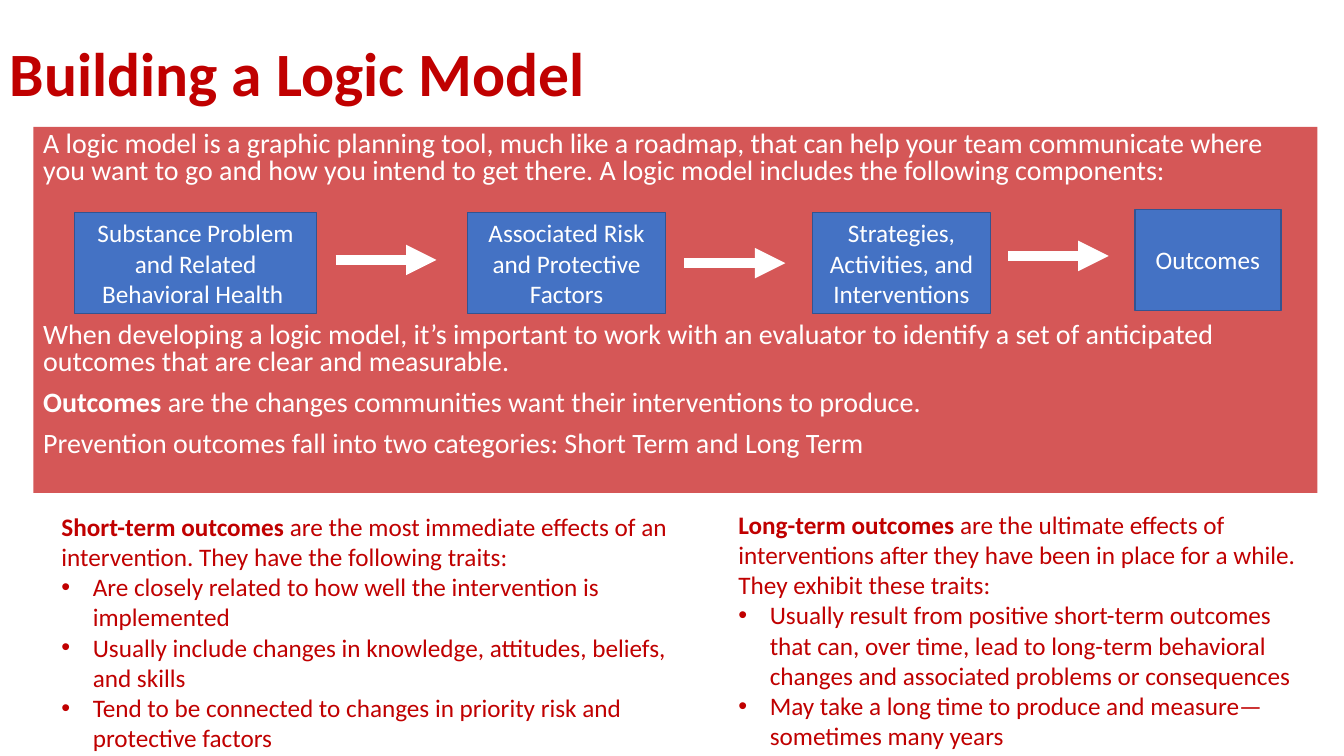
from dataclasses import dataclass

from lxml.etree import SubElement
from pptx import Presentation
from pptx.dml.color import RGBColor
from pptx.enum.shapes import MSO_CONNECTOR as Connector, MSO_SHAPE as Shape
from pptx.enum.text import MSO_ANCHOR as Anchor, PP_ALIGN as Align
from pptx.oxml.ns import qn
from pptx.util import Cm, Pt


@dataclass(frozen=True)
class Theme:
    font: str = "Calibri"
    red: RGBColor = RGBColor(0xC0, 0x00, 0x00)
    blue: RGBColor = RGBColor(0x44, 0x72, 0xC4)
    outline: RGBColor = RGBColor(0x32, 0x54, 0x91)
    white: RGBColor = RGBColor(0xFF, 0xFF, 0xFF)
    title_size: Pt = Pt(44)
    panel_size: Pt = Pt(20)
    text_size: Pt = Pt(18)


theme = Theme()
presentation = Presentation()
presentation.slide_width, presentation.slide_height = Cm(33.87), Cm(19.05)
slide = presentation.slides.add_slide(presentation.slide_layouts[6])
shapes = slide.shapes


def add_run(paragraph, text, size, color, bold=False):
    run = paragraph.add_run()
    run.text = text
    run.font.name = theme.font
    run.font.size = size
    run.font.bold = bold
    run.font.color.rgb = color


def add_rectangle(left, top, width, height, color):
    """Add a plain rectangle without shadow or outline, with wrapped text."""
    shape = shapes.add_shape(Shape.RECTANGLE, Cm(left), Cm(top), Cm(width), Cm(height))
    shape.shadow.inherit = False
    shape.fill.solid()
    shape.fill.fore_color.rgb = color
    shape.line.fill.background()
    shape.text_frame.word_wrap = True
    return shape


# Title
title = shapes.add_textbox(Cm(0), Cm(0.08), Cm(29.21), Cm(3.68)).text_frame
title.word_wrap = True
title.vertical_anchor = Anchor.MIDDLE
title.paragraphs[0].line_spacing = 0.9
add_run(title.paragraphs[0], "Building a Logic Model", theme.title_size, theme.red, True)

# Translucent panel; the second paragraph leaves room for the flow
panel = add_rectangle(0.84, 3.2, 32.36, 9.22, theme.red)
panel_color = panel.fill._xPr.find(qn("a:solidFill"))[0]
SubElement(panel_color, qn("a:alpha"), val="66000")
panel.text_frame.vertical_anchor = Anchor.TOP
panel_paragraphs = [
    (0, "", "A logic model is a graphic planning tool, much like a roadmap, that can help "
     "your team communicate where you want to go and how you intend to get there. "
     "A logic model includes the following components:"),
    (98, "", "When developing a logic model, it’s important to work with an evaluator to "
     "identify a set of anticipated outcomes that are clear and measurable."),
    (10, "Outcomes ", "are the changes communities want their interventions to produce."),
    (10, "", "Prevention outcomes fall into two categories: Short Term and Long Term"),
]
for index, (space, lead, text) in enumerate(panel_paragraphs):
    frame = panel.text_frame
    paragraph = frame.add_paragraph() if index else frame.paragraphs[0]
    paragraph.alignment = Align.LEFT
    paragraph.line_spacing = 0.8
    paragraph.space_before = Pt(space)
    if lead:
        add_run(paragraph, lead, theme.panel_size, theme.white, True)
    add_run(paragraph, text, theme.panel_size, theme.white)

# Outcome columns: left, top, width, bold lead, introduction, traits
columns = [
    (1.3, 12.75, 16.36, "Short-term outcomes ",
     "are the most immediate effects of an intervention. They have the following traits:",
     ["Are closely related to how well the intervention is implemented",
      "Usually include changes in knowledge, attitudes, beliefs, and skills",
      "Tend to be connected to changes in priority risk and protective factors"]),
    (18.36, 12.7, 14.83, "Long-term outcomes ",
     "are the ultimate effects of interventions after they have been in place for a while. "
     "They exhibit these traits:",
     ["Usually result from positive short-term outcomes that can, over time, lead to "
      "long-term behavioral changes and associated problems or consequences",
      "May take a long time to produce and measure—sometimes many years"]),
]
for left, top, width, lead, introduction, traits in columns:
    frame = shapes.add_textbox(Cm(left), Cm(top), Cm(width), Cm(6.4)).text_frame
    frame.word_wrap = True
    add_run(frame.paragraphs[0], lead, theme.text_size, theme.red, True)
    add_run(frame.paragraphs[0], introduction, theme.text_size, theme.red)
    for trait in traits:
        paragraph = frame.add_paragraph()
        properties = paragraph._p.get_or_add_pPr()
        properties.set("marL", str(Cm(0.79)))
        properties.set("indent", str(Cm(-0.79)))
        SubElement(properties, qn("a:buFont"), typeface="Arial")
        SubElement(properties, qn("a:buChar"), char="•")
        add_run(paragraph, trait, theme.text_size, theme.red)

# Flow of components
components = [
    (1.88, 5.36, 6.1, "Substance Problem and Related Behavioral Health "),
    (11.79, 5.36, 4.98, "Associated Risk and Protective Factors"),
    (20.47, 5.36, 4.5, "Strategies, Activities, and Interventions"),
    (28.6, 5.28, 3.68, "Outcomes"),
]
for left, top, width, text in components:
    box = add_rectangle(left, top, width, 2.54, theme.blue)
    box.line.color.rgb = theme.outline
    box.line.width = Pt(1)
    box.text_frame.vertical_anchor = Anchor.MIDDLE
    paragraph = box.text_frame.paragraphs[0]
    paragraph.alignment = Align.CENTER
    add_run(paragraph, text, theme.text_size, theme.white)

for left, top in [(8.46, 6.55), (17.25, 6.63), (25.4, 6.45)]:
    arrow = shapes.add_connector(
        Connector.STRAIGHT, Cm(left), Cm(top), Cm(left + 2.54), Cm(top))
    arrow.line.color.rgb = theme.white
    arrow.line.width = Pt(7.25)
    SubElement(arrow.line._get_or_add_ln(), qn("a:tailEnd"), type="triangle")
    SubElement(arrow._element.spPr, qn("a:effectLst"))

presentation.save("out.pptx")
